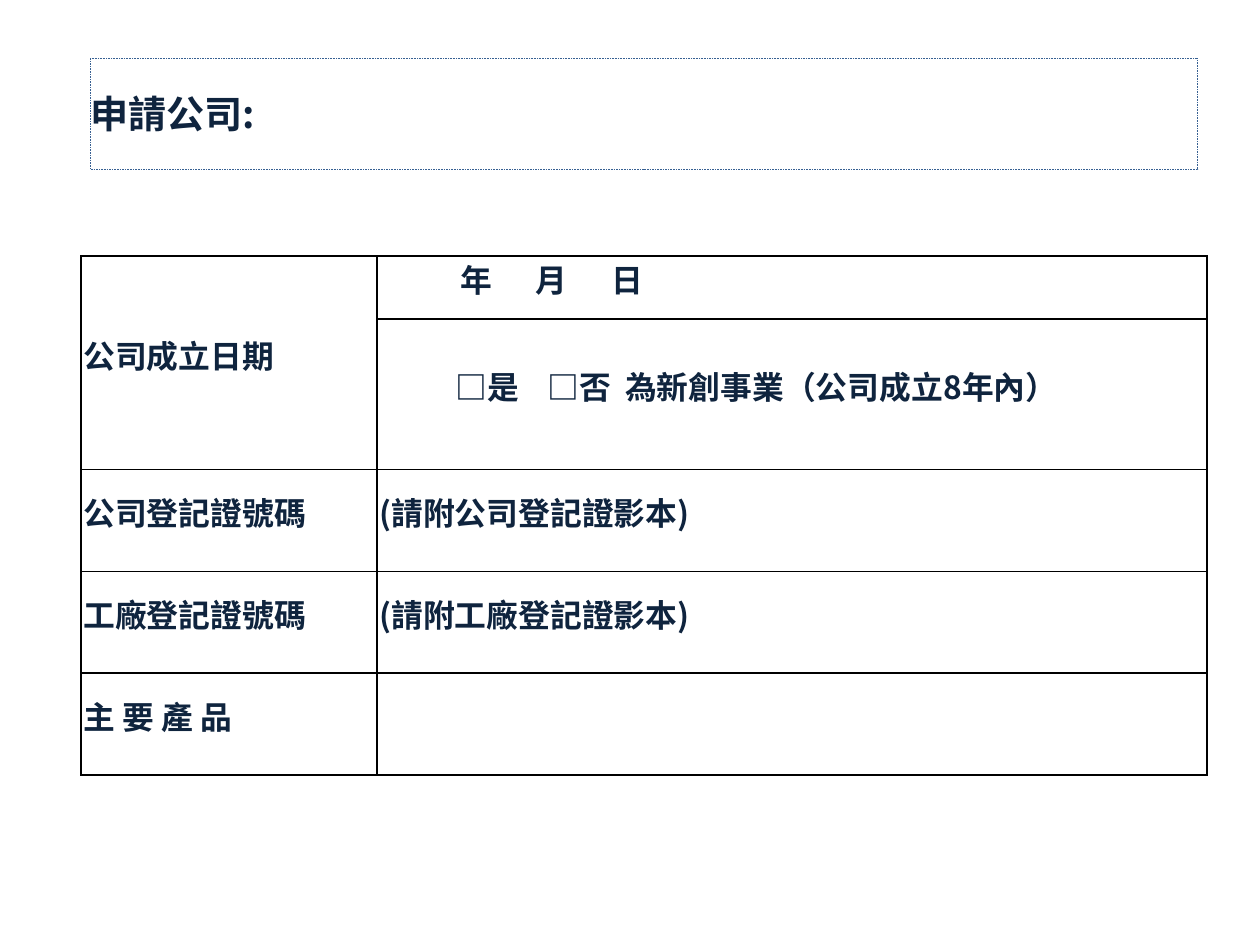
from lxml import etree
from pptx import Presentation
from pptx.dml.color import RGBColor
from pptx.enum.dml import MSO_LINE
from pptx.enum.shapes import MSO_SHAPE
from pptx.enum.text import MSO_ANCHOR, PP_ALIGN
from pptx.oxml.ns import qn
from pptx.util import Inches, Pt

RECT = MSO_SHAPE.RECTANGLE
MIDDLE = MSO_ANCHOR.MIDDLE
LEFT = PP_ALIGN.LEFT
DOTTED = MSO_LINE.ROUND_DOT
NAVY = RGBColor(0x0F, 0x24, 0x3E)
BLUE = RGBColor(0x37, 0x60, 0x92)
BLACK = RGBColor(0, 0, 0)
FONT = "Noto Sans CJK SC"

# The page is 28 by 21 cm
PAGE = (28 / 2.54, 21 / 2.54)
COLS = (2.59, 7.26)
ROWS = (0.55, 1.32, 0.89, 0.89, 0.89)
# Each row: label, entry, tab stops of the entry
FORM = (
    ("公司成立日期", "\t年\t月\t日", (0.71, 1.37, 2.03)),
    ("", "\t□是\t□否\t為新創事業（公司成立8年內）", (0.67, 1.47, 2.15)),
    ("公司登記證號碼", "(請附公司登記證影本)", ()),
    ("工廠登記證號碼", "(請附工廠登記證影本)", ()),
    ("主 要 產 品", "", ()),
)


def write(frame, text, size, stops=()):
    para = frame.paragraphs[0]
    para.text = text
    para.alignment = LEFT
    if stops:
        tabs = etree.SubElement(para._p.get_or_add_pPr(), qn("a:tabLst"))
        for stop in stops:
            etree.SubElement(tabs, qn("a:tab"), pos=str(Inches(stop)), algn="l")
    for run in para.runs:
        font = run.font
        font.name = FONT
        font.size = Pt(size)
        font.bold = True
        font.color.rgb = NAVY
        etree.SubElement(run._r.get_or_add_rPr(), qn("a:ea"), typeface=FONT)
    return para


def add_border(cell):
    props = cell._tc.get_or_add_tcPr()
    for side in ("a:lnL", "a:lnR", "a:lnT", "a:lnB"):
        line = etree.SubElement(props, qn(side), w=str(Pt(1)))
        fill = etree.SubElement(line, qn("a:solidFill"))
        etree.SubElement(fill, qn("a:srgbClr"), val=str(BLACK))


def fill_cell(cell, text, stops=()):
    add_border(cell)
    cell.fill.background()
    cell.vertical_anchor = MIDDLE
    cell.margin_left = cell.margin_right = Inches(0.02)
    cell.margin_top = cell.margin_bottom = 0
    write(cell.text_frame, text, 20, stops).line_spacing = Pt(18)


def add_title(slide):
    box = slide.shapes.add_shape(
        RECT, Inches(0.79), Inches(0.51), Inches(9.69), Inches(0.97))
    box.shadow.inherit = False
    box.fill.background()
    box.line.color.rgb = BLUE
    box.line.width = Pt(0.5)
    box.line.dash_style = DOTTED
    frame = box.text_frame
    frame.word_wrap = True
    frame.vertical_anchor = MIDDLE
    frame.margin_left = frame.margin_right = 0
    frame.margin_top = frame.margin_bottom = 0
    write(frame, "申請公司:", 24)


def add_form(slide):
    table = slide.shapes.add_table(
        len(ROWS), len(COLS), Inches(0.71), Inches(2.24),
        Inches(sum(COLS)), Inches(sum(ROWS))).table
    table.first_row = table.horz_banding = False
    for col, width in zip(table.columns, COLS):
        col.width = Inches(width)
    for row, height in zip(table.rows, ROWS):
        row.height = Inches(height)
    for row, (label, entry, stops) in enumerate(FORM):
        fill_cell(table.cell(row, 0), label)
        fill_cell(table.cell(row, 1), entry, stops)
    # The founding date label spans two rows
    table.cell(0, 0).merge(table.cell(1, 0))


def main():
    deck = Presentation()
    deck.slide_width, deck.slide_height = map(Inches, PAGE)
    slide = deck.slides.add_slide(deck.slide_layouts[6])
    add_title(slide)
    add_form(slide)
    deck.save("out.pptx")


if __name__ == "__main__":
    main()
